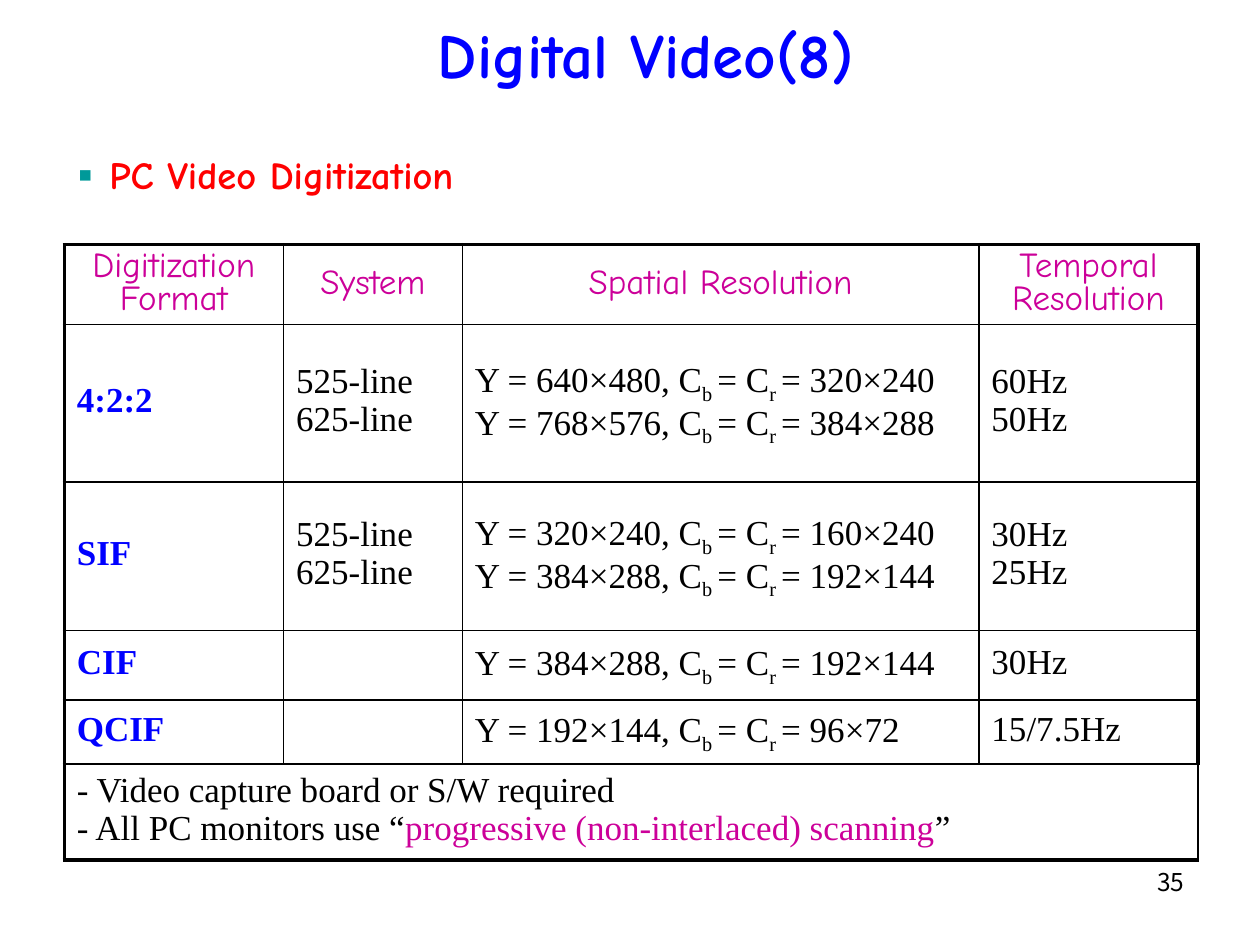
from lxml.etree import SubElement
from pptx import Presentation
from pptx.dml.color import RGBColor
from pptx.enum.text import MSO_ANCHOR, PP_ALIGN
from pptx.oxml.ns import qn
from pptx.util import Inches, Pt

BLACK = RGBColor(0, 0, 0)
BLUE = RGBColor(0, 0, 255)
RED = RGBColor(255, 0, 0)
MAGENTA = RGBColor(0xCC, 0, 0x99)
TEAL = RGBColor(0, 0x99, 0x99)
COMIC, TIMES, SANS = "Comic Neue", "Times New Roman", "Noto Sans CJK KR"

# Content
TITLE = "Digital Video(8)"
TOPIC = "PC Video Digitization"
PAGE = "35"
HEADERS = ["Digitization Format", "System", "Spatial Resolution", "Temporal Resolution"]
LINES = ["525-line", "625-line"]
# Format, systems, (luma, chroma) sizes, frame rates
FORMATS = [
    ("4:2:2", LINES, [("640×480", "320×240"), ("768×576", "384×288")], ["60Hz", "50Hz"]),
    ("SIF", LINES, [("320×240", "160×240"), ("384×288", "192×144")], ["30Hz", "25Hz"]),
    ("CIF", [], [("384×288", "192×144")], ["30Hz"]),
    ("QCIF", [], [("192×144", "96×72")], ["15/7.5Hz"]),
]
NOTES = [
    [("- Video capture board or S/W required", BLACK)],
    [("- All PC monitors use “", BLACK),
     ("progressive (non-interlaced) scanning", MAGENTA), ("”", BLACK)],
]
COLS = [1.74, 1.42, 4.1, 1.74]
ROWS = [0.63, 1.25, 1.18, 0.55, 0.51, 0.76]


def add_run(p, text, size, font, color, bold=False, base=0):
    r = p.add_run()
    r.text = text
    f = r.font
    f.size, f.name, f.bold = Pt(size), font, bold
    f.color.rgb = color
    for tag in ("a:ea", "a:cs"):
        SubElement(f._element, qn(tag), typeface=font)
    if base:
        f._element.set("baseline", str(base * 1000))


def add_text(s, box, text, size, font, color, bold=False,
             align=PP_ALIGN.LEFT, anchor=MSO_ANCHOR.TOP):
    tf = s.shapes.add_textbox(*(Inches(v) for v in box)).text_frame
    tf.word_wrap = True
    tf.vertical_anchor = anchor
    p = tf.paragraphs[0]
    p.alignment = align
    add_run(p, text, size, font, color, bold)
    return p


def add_bullet(p, char, color, indent):
    pPr = p._p.get_or_add_pPr()
    pPr.set("marL", str(Inches(indent)))
    pPr.set("indent", str(-Inches(indent)))
    SubElement(SubElement(pPr, qn("a:buClr")), qn("a:srgbClr"), val=str(color))
    SubElement(pPr, qn("a:buFont"), typeface=SANS)
    SubElement(pPr, qn("a:buChar"), char=char)


def set_borders(cell, row, col):
    outer = {"L": col == 0, "R": col == len(COLS) - 1,
             "T": row == 0, "B": row == len(ROWS) - 1}
    tcPr = cell._tc.get_or_add_tcPr()
    for i, (side, thick) in enumerate(outer.items()):
        ln = tcPr.makeelement(qn(f"a:ln{side}"), {"w": str(Pt(2.25 if thick else 1))})
        SubElement(SubElement(ln, qn("a:solidFill")), qn("a:srgbClr"), val=str(BLACK))
        tcPr.insert(i, ln)


def fill_cell(cell, paragraphs, align=PP_ALIGN.LEFT):
    """Each paragraph is a list of (text, font, color, bold, baseline) runs."""
    tf = cell.text_frame
    for i, runs in enumerate(paragraphs):
        p = tf.add_paragraph() if i else tf.paragraphs[0]
        p.alignment, p.line_spacing, p.space_before = align, 0.8, Pt(4)
        for text, *style in runs:
            add_run(p, text, 20, *style)


def plain(text, color=BLACK, bold=False, base=0):
    return (text, TIMES, color, bold, base)


def resolution(luma, chroma):
    return [plain(f"Y = {luma}, C"), plain("b ", base=-25), plain("= C"),
            plain("r ", base=-25), plain(f"= {chroma}")]


def main():
    prs = Presentation()
    prs.slide_width, prs.slide_height = Inches(10), Inches(7.5)
    s = prs.slides.add_slide(prs.slide_layouts[6])

    # Page number, title and topic
    add_text(s, (7.17, 6.83, 2.33, 0.52), PAGE, 14, SANS, BLACK, align=PP_ALIGN.RIGHT)
    add_text(s, (2.72, 0, 4.81, 0.85), TITLE, 36, COMIC, BLUE, True,
             PP_ALIGN.CENTER, MSO_ANCHOR.MIDDLE)
    topic = add_text(s, (0.43, 1.15, 3.94, 0.47), TOPIC, 22, COMIC, RED, True)
    add_bullet(topic, "▪", TEAL, 0.34)

    # Table grid
    table = s.shapes.add_table(len(ROWS), len(COLS), Inches(0.51), Inches(1.94),
                               Inches(sum(COLS)), Inches(sum(ROWS))).table
    table.first_row = table.horz_banding = False
    for col, width in zip(table.columns, COLS):
        col.width = Inches(width)
    for row, height in zip(table.rows, ROWS):
        row.height = Inches(height)
    for i in range(len(ROWS)):
        for j in range(len(COLS)):
            cell = table.cell(i, j)
            cell.fill.background()
            cell.vertical_anchor = MSO_ANCHOR.MIDDLE
            set_borders(cell, i, j)

    # Table text
    for j, header in enumerate(HEADERS):
        fill_cell(table.cell(0, j), [[(header, COMIC, MAGENTA)]], PP_ALIGN.CENTER)
    for i, (name, systems, sizes, rates) in enumerate(FORMATS, 1):
        columns = [
            [[plain(name, BLUE, True)]],
            [[plain(t)] for t in systems],
            [resolution(*pair) for pair in sizes],
            [[plain(t)] for t in rates],
        ]
        for j, paragraphs in enumerate(columns):
            fill_cell(table.cell(i, j), paragraphs)

    # Notes row across the full width
    last = len(ROWS) - 1
    notes = table.cell(last, 0)
    notes.merge(table.cell(last, len(COLS) - 1))
    fill_cell(notes, [[plain(*run) for run in line] for line in NOTES])

    prs.save("out.pptx")


if __name__ == "__main__":
    main()
